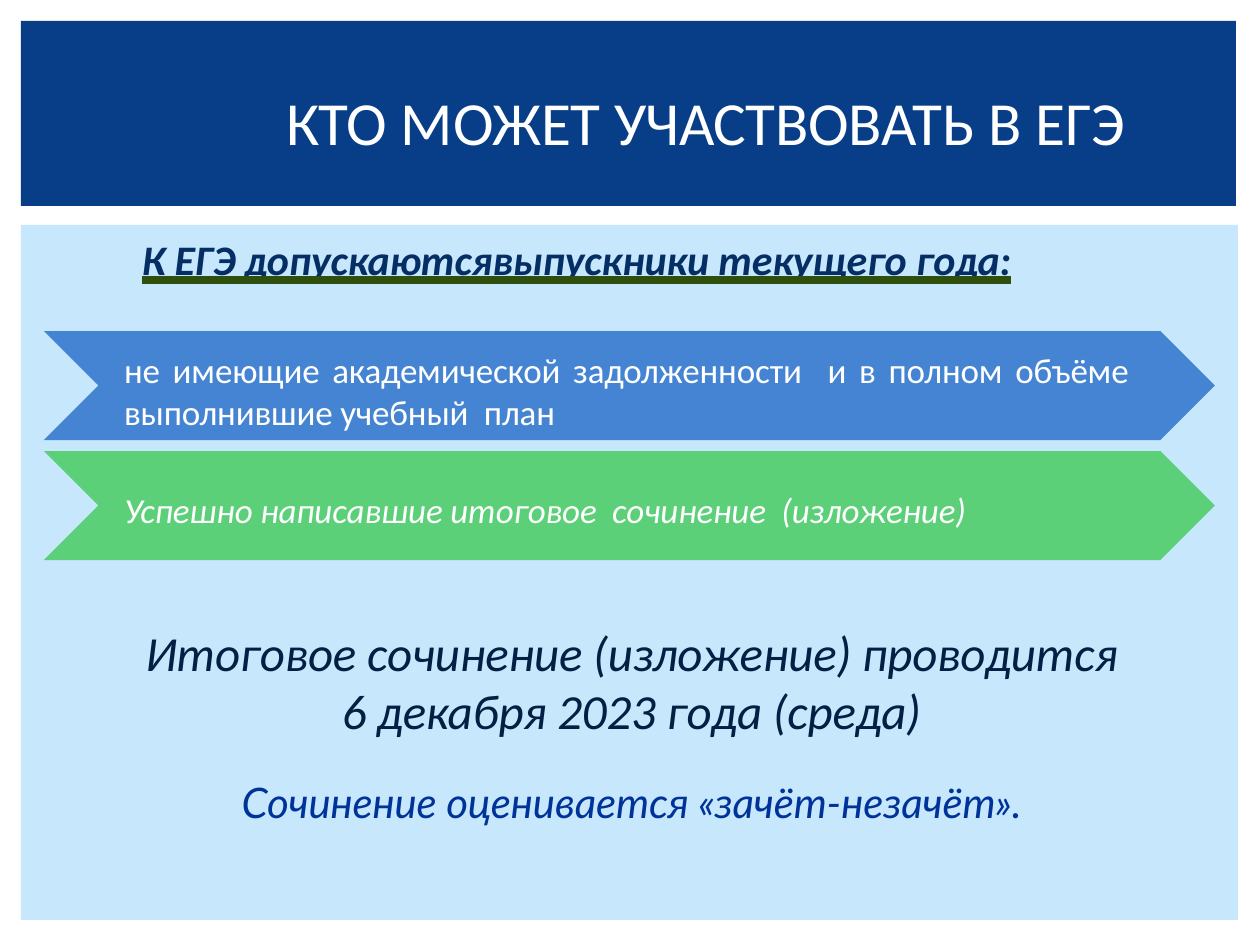
from lxml.etree import SubElement
from pptx import Presentation
from pptx.dml.color import RGBColor
from pptx.enum.shapes import MSO_SHAPE as Shape
from pptx.enum.text import MSO_ANCHOR as Anchor, PP_ALIGN as Align
from pptx.oxml.ns import qn
from pptx.util import Pt

PX = 914400 / 126

WHITE = RGBColor(0xFF, 0xFF, 0xFF)
BAND_BLUE = RGBColor(0x07, 0x3E, 0x87)
PANEL_BLUE = RGBColor(0xC6, 0xE7, 0xFC)
ARROW_BLUE = RGBColor(0x45, 0x84, 0xD3)
ARROW_GREEN = RGBColor(0x5B, 0xD0, 0x78)
HEADING_NAVY = RGBColor(0x05, 0x2E, 0x65)
UNDERLINE_GREEN = RGBColor(0x2F, 0x4F, 0x0C)
DATE_NAVY = RGBColor(0x04, 0x1F, 0x44)
GRADE_BLUE = RGBColor(0x00, 0x33, 0x99)


def px(*lengths):
    return [round(length * PX) for length in lengths]


def add_block(slide, kind, box, color):
    block = slide.shapes.add_shape(kind, *px(*box))
    block.shadow.inherit = False
    block.fill.solid()
    block.fill.fore_color.rgb = color
    block.line.fill.background()


def set_frame(frame, anchor=Anchor.TOP):
    settings = dict(margin_left=0, margin_right=0, margin_top=px(1)[0],
                    margin_bottom=0, word_wrap=True, vertical_anchor=anchor)
    for name, value in settings.items():
        setattr(frame, name, value)


def write(paragraph, text, color, align=Align.LEFT, **font):
    paragraph.alignment = align
    run = paragraph.add_run()
    run.text = text
    run.font.color.rgb = color
    for name, value in {"name": "Calibri", **font}.items():
        setattr(run.font, name, value)
    properties = run.font._element
    properties.set("spc", "-10")
    return properties


def add_text(slide, box, anchor=Anchor.TOP):
    frame = slide.shapes.add_textbox(*px(*box)).text_frame
    set_frame(frame, anchor)
    return frame


def title_band(slide, box):
    left, top, width, height = box
    add_block(slide, Shape.RECTANGLE, box, BAND_BLUE)
    title = slide.shapes.title
    title.element.getparent().append(title.element)  # bring above the band
    place = px(left + 183, top + 62, width - 212, 76)
    for name, value in zip(("left", "top", "width", "height"), place):
        setattr(title, name, value)
    set_frame(title.text_frame, Anchor.MIDDLE)
    write(title.text_frame.paragraphs[0], "КТО МОЖЕТ УЧАСТВОВАТЬ В ЕГЭ",
          WHITE, Align.CENTER, size=Pt(35))


def heading(slide, box):
    paragraph = add_text(slide, box).paragraphs[0]
    properties = write(paragraph, "К ЕГЭ допускаютсявыпускники текущего года:",
                       HEADING_NAVY, Align.RIGHT, size=Pt(24), bold=True, italic=True)
    # Heavy green underline, placed before the font elements
    properties.set("u", "heavy")
    underline = SubElement(properties, qn("a:uFill"))
    fill = SubElement(underline, qn("a:solidFill"))
    SubElement(fill, qn("a:srgbClr")).set("val", str(UNDERLINE_GREEN))
    properties.find(qn("a:latin")).addprevious(underline)


def requirements(slide, box):
    left, top, width, height = box
    items = (
        ("не имеющие академической задолженности  и в полном объёме "
         "выполнившие учебный  план", ARROW_BLUE, Align.JUSTIFY, False),
        ("Успешно написавшие итоговое  сочинение  (изложение)",
         ARROW_GREEN, Align.LEFT, True),
    )
    gap = 11
    arrow_height = (height - gap) // len(items)
    for row, (text, color, align, italic) in enumerate(items):
        y = top + row * (arrow_height + gap)
        add_block(slide, Shape.CHEVRON, (left, y, width, arrow_height), color)
        frame = add_text(slide, (left + 80, y + 4, width - 167, arrow_height), Anchor.MIDDLE)
        write(frame.paragraphs[0], text, WHITE, align, size=Pt(20), italic=italic)


def essay_note(slide, box):
    frame = add_text(slide, box)
    lines = (
        ("Итоговое сочинение (изложение) проводится", DATE_NAVY, "Calibri", 28, 0),
        ("6 декабря 2023 года (среда)", DATE_NAVY, "Calibri", 28, 0),
        ("Сочинение оценивается «зачёт-незачёт».", GRADE_BLUE, "Lato", 24, 21),
    )
    for row, (text, color, font, size, before) in enumerate(lines):
        paragraph = frame.add_paragraph() if row else frame.paragraphs[0]
        paragraph.space_before = Pt(before)
        write(paragraph, text, color, Align.CENTER, name=font, size=Pt(size), italic=True)


def main():
    deck = Presentation()
    deck.slide_width, deck.slide_height = px(1260, 945)
    slide = deck.slides.add_slide(deck.slide_layouts[5])
    add_block(slide, Shape.RECTANGLE, (21, 225, 1217, 695), PANEL_BLUE)
    title_band(slide, (21, 21, 1215, 185))
    heading(slide, (54, 233, 957, 53))
    requirements(slide, (44, 331, 1171, 229))
    essay_note(slide, (82, 621, 1099, 210))
    deck.save("out.pptx")


if __name__ == "__main__":
    main()
